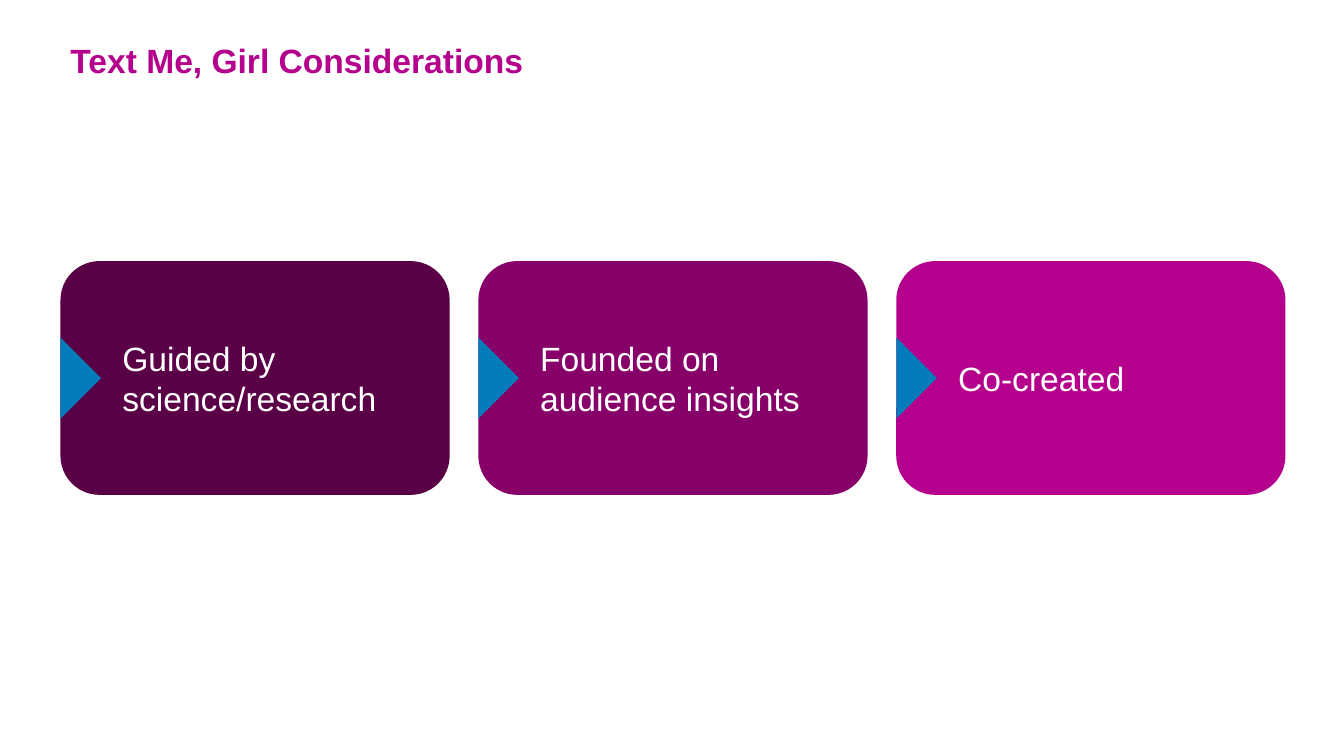
from pptx import Presentation
from pptx.dml.color import RGBColor
from pptx.enum.shapes import MSO_SHAPE as SHAPE
from pptx.enum.text import MSO_ANCHOR as ANCHOR, PP_ALIGN as ALIGN
from pptx.util import Pt

TITLE = "Text Me, Girl Considerations"
CARDS = [
    ("Guided by science/research", "plum"),
    ("Founded on audience insights", "purple"),
    ("Co-created", "magenta"),
]
COLORS = {
    "plum": "5A0046",
    "purple": "870069",
    "magenta": "B4008C",
    "blue": "047BBA",
    "white": "FEFFFE",
}
LEFT = 43.2
CARD_TOP, CARD_W, CARD_H, CARD_GAP = 186.5, 278, 167, 20.5
MARKER_SIZE = 41
TEXT_INDENT = 36


def rgb(name):
    return RGBColor.from_string(COLORS[name])


def add_filled(slide, kind, x, y, w, h, color):
    sp = slide.shapes.add_shape(kind, Pt(x), Pt(y), Pt(w), Pt(h))
    sp.shadow.inherit = False
    sp.fill.solid()
    sp.fill.fore_color.rgb = rgb(color)
    sp.line.fill.background()
    return sp


def write(tf, text, color, bold=False):
    tf.word_wrap = True
    tf.vertical_anchor = ANCHOR.MIDDLE
    p = tf.paragraphs[0]
    p.text = text
    p.alignment = ALIGN.LEFT
    p.font.name = "Arial"
    p.font.size = Pt(24)
    p.font.bold = bold
    p.font.color.rgb = rgb(color)
    return p


def add_card(slide, x, text, color):
    """Add a card with a blue marker pointing inwards from its left edge."""
    card = add_filled(slide, SHAPE.ROUNDED_RECTANGLE, x, CARD_TOP, CARD_W, CARD_H, color)
    tf = card.text_frame
    tf.margin_left = Pt(TEXT_INDENT)
    tf.margin_top = tf.margin_right = tf.margin_bottom = 0
    write(tf, text, "white")
    marker = add_filled(
        slide, SHAPE.RIGHT_TRIANGLE,
        x - MARKER_SIZE / 2, CARD_TOP + (CARD_H - MARKER_SIZE) / 2,
        MARKER_SIZE, MARKER_SIZE, "blue",
    )
    marker.rotation = 225


def main():
    prs = Presentation()
    prs.slide_width, prs.slide_height = Pt(960), Pt(540)
    s = prs.slides.add_slide(prs.slide_layouts[6])
    s.background.fill.solid()
    s.background.fill.fore_color.rgb = rgb("white")

    title = s.shapes.add_textbox(Pt(LEFT), Pt(-7.2), Pt(828), Pt(104.4))
    write(title.text_frame, TITLE, "magenta", bold=True).line_spacing = 0.9

    for i, (text, color) in enumerate(CARDS):
        add_card(s, LEFT + i * (CARD_W + CARD_GAP), text, color)

    prs.save("out.pptx")


if __name__ == "__main__":
    main()
